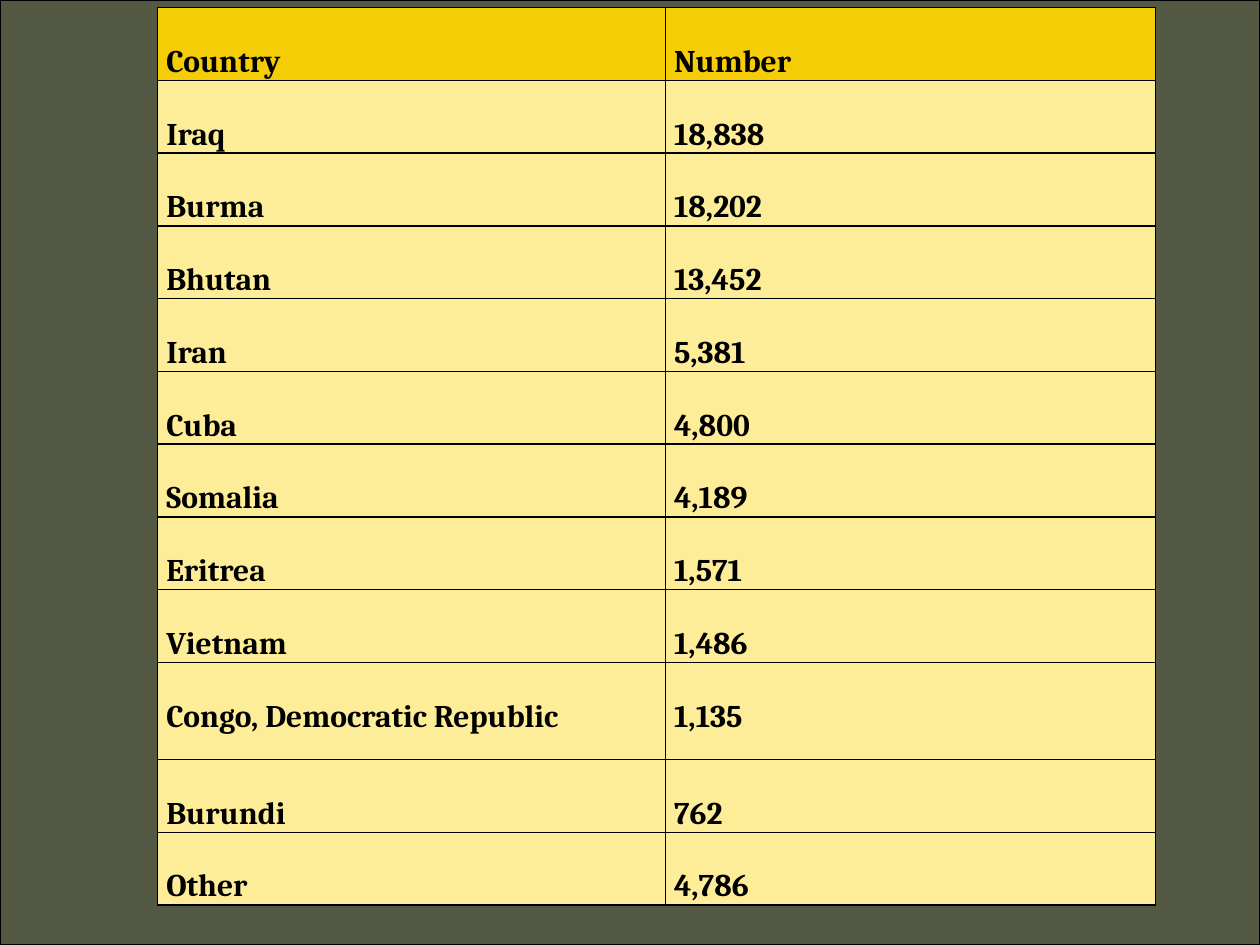
"""Build a slide with a table of countries and their numbers."""
from lxml import etree
from pptx import Presentation
from pptx import util as u
from pptx.dml.color import RGBColor
from pptx.enum import shapes
from pptx.oxml import ns

OLIVE = RGBColor(0x54, 0x59, 0x43)
GOLD = RGBColor(0xF5, 0xCD, 0x06)
CREAM = RGBColor(0xFD, 0xEC, 0x98)
BLACK = RGBColor(0, 0, 0)

COLUMN_WIDTHS = (4.03, 3.89)
ROW_HEIGHT = 0.54
TALL_ROWS = {"Congo, Democratic Republic": 0.77}
ROWS = (
    ("Country", "Number"),
    ("Iraq", "18,838"),
    ("Burma", "18,202"),
    ("Bhutan", "13,452"),
    ("Iran", "5,381"),
    ("Cuba", "4,800"),
    ("Somalia", "4,189"),
    ("Eritrea", "1,571"),
    ("Vietnam", "1,486"),
    ("Congo, Democratic Republic", "1,135"),
    ("Burundi", "762"),
    ("Other", "4,786"),
)

CELL_FORMAT = {
    "margin_left": u.Inches(0.07),
    "margin_right": u.Inches(0.07),
    "margin_top": 0,
    "margin_bottom": 0,
}
PARAGRAPH_FORMAT = {"line_spacing": 2.0, "space_after": u.Pt(10)}
FONT_FORMAT = {"name": "Cambria", "size": u.Pt(18), "bold": True}


def apply_format(target, values):
    """Set each named attribute on the target."""
    for name, value in values.items():
        setattr(target, name, value)


def add_backdrop(presentation, slide):
    """Cover the slide with an outlined olive rectangle."""
    shape = slide.shapes.add_shape(
        shapes.MSO_SHAPE.RECTANGLE, 0, 0,
        presentation.slide_width, presentation.slide_height)
    shape.shadow.inherit = False
    shape.fill.solid()
    shape.fill.fore_color.rgb = OLIVE
    shape.line.color.rgb = BLACK
    shape.line.width = u.Pt(0.75)


def add_borders(cell):
    """Draw a one-point black line on every side of a cell."""
    properties = cell._tc.get_or_add_tcPr()
    for side in ("a:lnL", "a:lnR", "a:lnT", "a:lnB"):
        line = etree.SubElement(properties, ns.qn(side), w=str(u.Pt(1)))
        fill = etree.SubElement(line, ns.qn("a:solidFill"))
        etree.SubElement(fill, ns.qn("a:srgbClr"), val=str(BLACK))


def fill_cell(cell, words, color):
    """Write and format one table cell."""
    add_borders(cell)
    cell.fill.solid()
    cell.fill.fore_color.rgb = color
    apply_format(cell, CELL_FORMAT)
    paragraph = cell.text_frame.paragraphs[0]
    apply_format(paragraph, PARAGRAPH_FORMAT)
    run = paragraph.add_run()
    run.text = words
    apply_format(run.font, FONT_FORMAT)
    run.font.color.rgb = BLACK


def add_country_table(slide):
    """Add the table with a gold header and cream body."""
    heights = [TALL_ROWS.get(country, ROW_HEIGHT) for country, _ in ROWS]
    table = slide.shapes.add_table(
        len(ROWS), len(COLUMN_WIDTHS), u.Inches(1.25), u.Inches(0.06),
        u.Inches(sum(COLUMN_WIDTHS)), u.Inches(sum(heights))).table
    for column, width in zip(table.columns, COLUMN_WIDTHS):
        column.width = u.Inches(width)
    for index, (row, height, values) in enumerate(zip(table.rows, heights, ROWS)):
        row.height = u.Inches(height)
        for cell, words in zip(row.cells, values):
            fill_cell(cell, words, CREAM if index else GOLD)


def main():
    """Build and save the presentation."""
    presentation = Presentation()
    presentation.slide_width = u.Inches(10)
    presentation.slide_height = u.Inches(7.5)
    slide = presentation.slides.add_slide(presentation.slide_layouts[6])
    add_backdrop(presentation, slide)
    add_country_table(slide)
    presentation.save("out.pptx")


if __name__ == "__main__":
    main()
